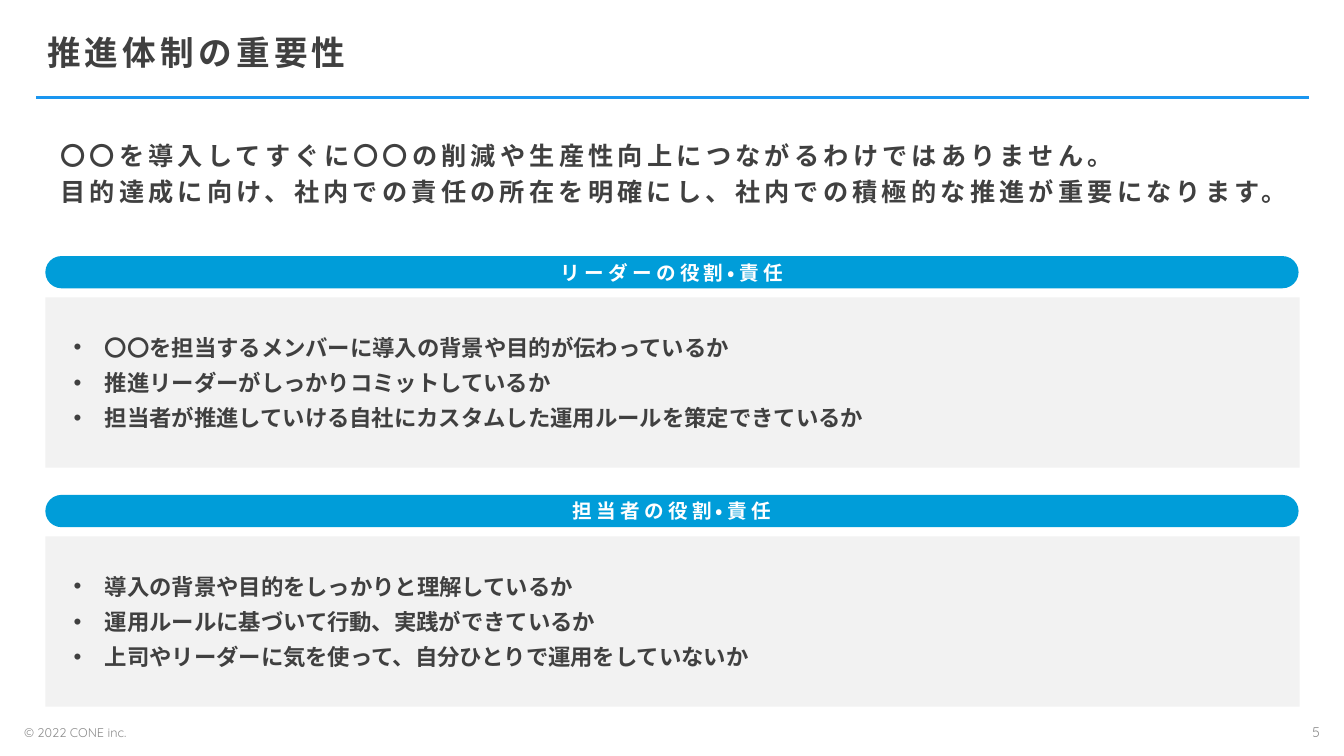
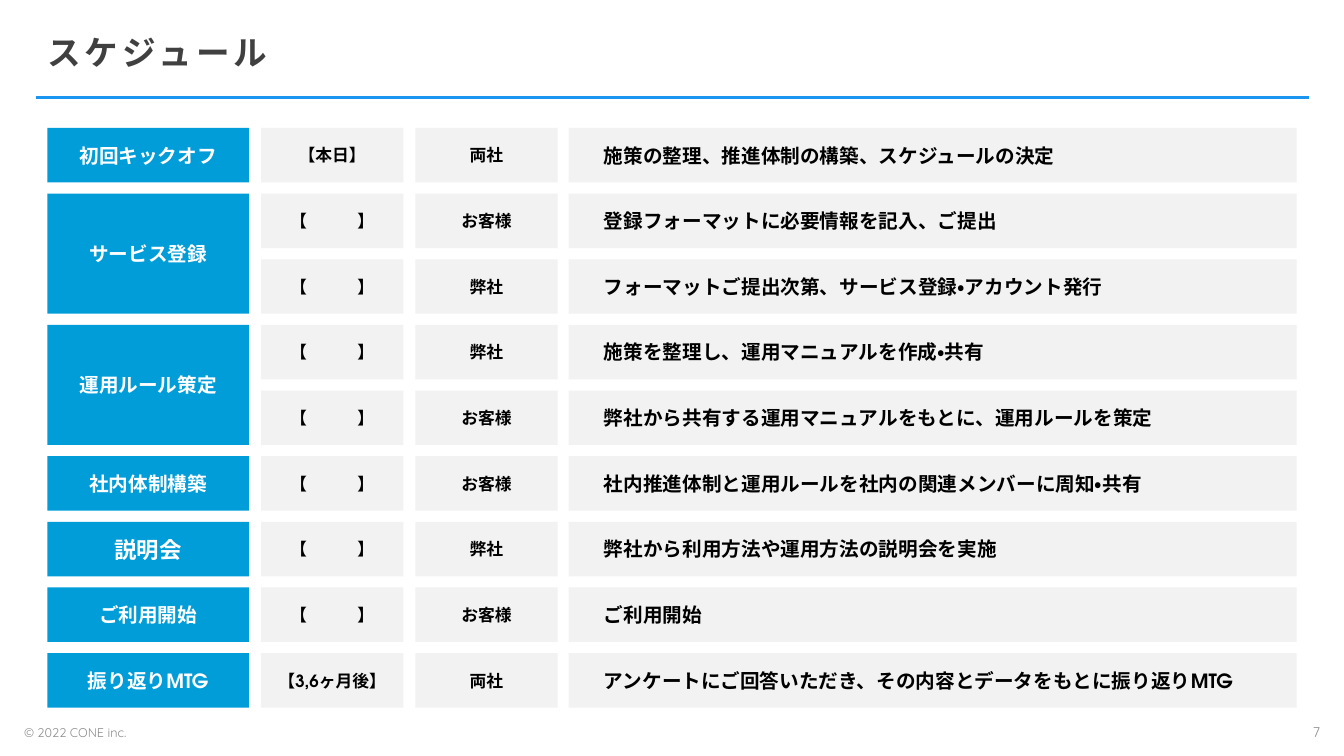
from lxml import etree
from pptx import Presentation
from pptx.dml.color import RGBColor
from pptx.enum.lang import MSO_LANGUAGE_ID
from pptx.enum.shapes import MSO_CONNECTOR, MSO_SHAPE
from pptx.enum.text import MSO_ANCHOR, PP_ALIGN
from pptx.oxml.ns import qn
from pptx.util import Inches, Pt

LEFT, CENTER, RIGHT = PP_ALIGN.LEFT, PP_ALIGN.CENTER, PP_ALIGN.RIGHT
TOP, MIDDLE = MSO_ANCHOR.TOP, MSO_ANCHOR.MIDDLE
RECTANGLE, PILL = MSO_SHAPE.RECTANGLE, MSO_SHAPE.ROUNDED_RECTANGLE
STRAIGHT = MSO_CONNECTOR.STRAIGHT
JAPANESE = MSO_LANGUAGE_ID.JAPANESE

BLUE, RULE, PANEL = "009DD9", "1A96F0", "F2F2F2"
DARK, MUTED, WHITE, BLACK = "404040", "8C8C8C", "FFFFFF", "000000"
HEADING_FONT, BODY_FONT, BULLET_FONT = "Quicksand", "TeX Gyre Adventor", "Arial"

COPYRIGHT = "© 2022 CONE inc."
LEAD = [
    "〇〇を導入してすぐに〇〇の削減や生産性向上につながるわけではありません。",
    "目的達成に向け、社内での責任の所在を明確にし、社内での積極的な推進が重要になります。",
]
ROLES = [
    ("リーダーの役割・責任", [
        "〇〇を担当するメンバーに導入の背景や目的が伝わっているか",
        "推進リーダーがしっかりコミットしているか",
        "担当者が推進していける自社にカスタムした運用ルールを策定できているか",
    ]),
    ("担当者の役割・責任", [
        "導入の背景や目的をしっかりと理解しているか",
        "運用ルールに基づいて行動、実践ができているか",
        "上司やリーダーに気を使って、自分ひとりで運用をしていないか",
    ]),
]
OPEN_DATE = "【　　　】"
PHASES = [
    ("初回キックオフ", 14, [
        ("【本日】", "両社", "施策の整理、推進体制の構築、スケジュールの決定"),
    ]),
    ("サービス登録", 14, [
        (OPEN_DATE, "お客様", "登録フォーマットに必要情報を記入、ご提出"),
        (OPEN_DATE, "弊社", "フォーマットご提出次第、サービス登録・アカウント発行"),
    ]),
    ("運用ルール策定", 14, [
        (OPEN_DATE, "弊社", "施策を整理し、運用マニュアルを作成・共有"),
        (OPEN_DATE, "お客様", "弊社から共有する運用マニュアルをもとに、運用ルールを策定"),
    ]),
    ("社内体制構築", 14, [
        (OPEN_DATE, "お客様", "社内推進体制と運用ルールを社内の関連メンバーに周知・共有"),
    ]),
    ("説明会", 16, [
        (OPEN_DATE, "弊社", "弊社から利用方法や運用方法の説明会を実施"),
    ]),
    ("ご利用開始", 14, [
        (OPEN_DATE, "お客様", "ご利用開始"),
    ]),
    ("振り返りMTG", 14, [
        ("【3,6ヶ月後】", "両社", "アンケートにご回答いただき、その内容とデータをもとに振り返りMTG"),
    ]),
]
PHASE_COLUMN = (0.47, 2)
STEP_COLUMNS = [
    (2.59, 1.41, 12, CENTER, 0.1),
    (4.12, 1.41, 12, CENTER, 0.1),
    (5.64, 7.22, 14, LEFT, 0.35),
]
FIRST_ROW, LAST_ROW, ROW_HEIGHT = 1.27, 6.48, 0.54


def color(value):
    return RGBColor.from_string(value)


def add_bullet(paragraph):
    properties = paragraph._p.get_or_add_pPr()
    properties.set("marL", str(Inches(0.31)))
    properties.set("indent", str(-Inches(0.31)))
    etree.SubElement(properties, qn("a:buFont")).set("typeface", BULLET_FONT)
    etree.SubElement(properties, qn("a:buChar")).set("char", "•")


def write(shape, lines, size=14, font=BODY_FONT, ink=BLACK, bold=True, align=LEFT,
          anchor=MIDDLE, insets=(0.1, 0.05, 0.1, 0.05), tracking=0, line_spacing=None,
          space_before=0, bullets=False, wrap=True):
    frame = shape.text_frame
    frame.word_wrap = wrap
    frame.vertical_anchor = anchor
    (frame.margin_left, frame.margin_top,
     frame.margin_right, frame.margin_bottom) = map(Inches, insets)
    for index, line in enumerate(lines):
        paragraph = frame.add_paragraph() if index else frame.paragraphs[0]
        if bullets:
            add_bullet(paragraph)
        paragraph.alignment = align
        if line_spacing:
            paragraph.line_spacing = line_spacing
        if index and space_before:
            paragraph.space_before = Pt(space_before)
        run = paragraph.add_run()
        run.text = line
        run.font.size = Pt(size)
        run.font.name = font
        run.font.bold = bold
        run.font.color.rgb = color(ink)
        run.font.language_id = JAPANESE
        if tracking:
            run._r.get_or_add_rPr().set("spc", str(tracking * 100))


def add_text(slide, box, lines, **style):
    write(slide.shapes.add_textbox(*map(Inches, box)), lines, font=HEADING_FONT, **style)


def add_block(slide, box, lines, fill, preset=RECTANGLE, **style):
    block = slide.shapes.add_shape(preset, *map(Inches, box))
    block.shadow.inherit = False
    block.fill.solid()
    block.fill.fore_color.rgb = color(fill)
    block.line.fill.background()
    if preset == PILL:
        block.adjustments[0] = 0.5
    write(block, lines, **style)


def add_page(deck, title, number):
    slide = deck.slides.add_slide(deck.slide_layouts[6])
    rule = slide.shapes.add_connector(
        STRAIGHT, Inches(0.36), Inches(0.97), Inches(12.98), Inches(0.97))
    rule.line.color.rgb = color(RULE)
    rule.line.width = Pt(2)
    etree.SubElement(rule._element.spPr, qn("a:effectLst"))
    add_text(slide, (0.37, 0.21, 12.52, 0.63), [title], size=24, ink=DARK, tracking=3,
             line_spacing=0.9, insets=(0.1, 0.08, 0.1, 0.05))
    add_text(slide, (0.14, 7.13, 3, 0.27), [COPYRIGHT], size=9, ink=MUTED, bold=False)
    add_text(slide, (10.19, 7.13, 3, 0.27), [str(number)], size=10, ink=MUTED,
             bold=False, align=RIGHT)
    return slide


def build_roles(deck):
    slide = add_page(deck, "推進体制の重要性", 5)
    add_text(slide, (0.5, 1.27, 12.33, 0.91), LEAD, size=18, ink=DARK, tracking=3,
             anchor=TOP, insets=(0.1, 0.16, 0.1, 0.05), line_spacing=0.9, space_before=6)
    for index, (role, checks) in enumerate(ROLES):
        top = 2.54 + index * 2.37
        add_block(slide, (0.45, top, 12.43, 0.32), [role], BLUE, preset=PILL,
                  ink=WHITE, align=CENTER, tracking=3, wrap=False)
        add_block(slide, (0.45, top + 0.41, 12.44, 1.69), checks, PANEL, size=16,
                  ink=DARK, insets=(0.28, 0.05, 0.1, 0.05), space_before=6, bullets=True)


def build_schedule(deck):
    slide = add_page(deck, "スケジュール", 7)
    row_count = sum(len(steps) for _, _, steps in PHASES)
    pitch = (LAST_ROW - FIRST_ROW) / (row_count - 1)
    row = 0
    for phase, phase_size, steps in PHASES:
        left, width = PHASE_COLUMN
        height = ROW_HEIGHT + (len(steps) - 1) * pitch
        add_block(slide, (left, FIRST_ROW + row * pitch, width, height), [phase], BLUE,
                  size=phase_size, ink=WHITE, align=CENTER)
        for step in steps:
            top = FIRST_ROW + row * pitch
            for entry, (left, width, size, align, inset) in zip(step, STEP_COLUMNS):
                add_block(slide, (left, top, width, ROW_HEIGHT), [entry], PANEL, size=size,
                          align=align, insets=(inset, 0.05, 0.1, 0.05))
            row += 1


def main():
    deck = Presentation()
    deck.slide_width, deck.slide_height = Inches(13.33), Inches(7.5)
    build_roles(deck)
    build_schedule(deck)
    deck.save("out.pptx")


if __name__ == "__main__":
    main()
